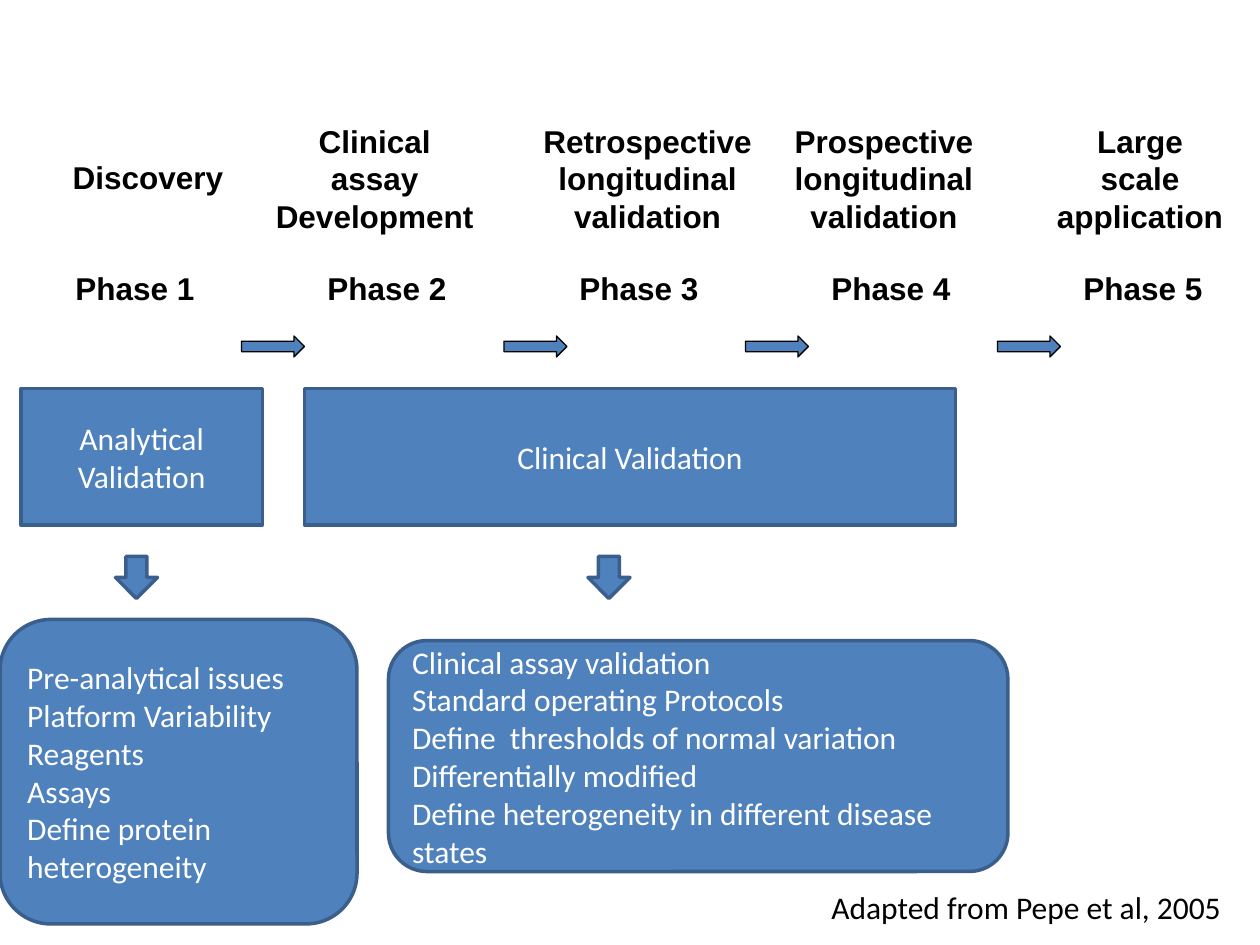
from pptx import Presentation
from pptx.dml.color import RGBColor
from pptx.enum.shapes import MSO_SHAPE
from pptx.enum.text import MSO_ANCHOR, PP_ALIGN
from pptx.oxml.ns import qn
from pptx.util import Inches, Pt
from lxml import etree

RECT, ROUND = MSO_SHAPE.RECTANGLE, MSO_SHAPE.ROUNDED_RECTANGLE
RIGHT, DOWN = MSO_SHAPE.RIGHT_ARROW, MSO_SHAPE.DOWN_ARROW
LEFT, MID = PP_ALIGN.LEFT, PP_ALIGN.CENTER

deck = Presentation()
deck.slide_width, deck.slide_height = Inches(10), Inches(7.5)
slide = deck.slides.add_slide(deck.slide_layouts[6])
unit = deck.slide_width / 120


def color(code):
    return RGBColor.from_string(code)


def put(kind, spot, text="", align=LEFT, font="Calibri", ink="FFFFFF", edge="3A5F8C", thick=2):
    place = [round(unit * n) for n in spot]
    if kind is None:
        shape = slide.shapes.add_textbox(*place)
    else:
        shape = slide.shapes.add_shape(kind, *place)
        shape.shadow.inherit = False
        shape.fill.solid()
        shape.fill.fore_color.rgb = color("4F81BD")
        shape.line.color.rgb = color(edge)
        shape.line.width = Pt(thick)
    if text:
        frame = shape.text_frame
        frame.text = text
        frame.word_wrap = True
        frame.vertical_anchor = MSO_ANCHOR.MIDDLE if kind else MSO_ANCHOR.TOP
        for para in frame.paragraphs:
            para.alignment = align
            for run in para.runs:
                run.font.name = font
                run.font.size = Pt(18)
                run.font.bold = font == "Arial"
                run.font.color.rgb = color(ink)
    return shape


heads = [
    ["Clinical", "Retrospective", "Prospective", "Large"],
    ["assay", "longitudinal", "longitudinal", "scale"],
    ["Development", "validation", "validation", "application"],
]
head = put(None, (25, 11, 95, 12), "\n".join("\t" + "\t".join(row) for row in heads),
           font="Arial", ink="000000")
put(None, (5.75, 14.5, 17, 4.8), "Discovery", font="Arial", ink="000000")
phase = put(None, (6, 25, 110, 4.8), "\t".join(f"Phase {n}" for n in range(1, 6)),
            font="Arial", ink="000000")

for box, side, stops in [(head, "ctr", (9.5, 35.5, 58, 82.4)), (phase, "l", (24, 48, 72, 96))]:
    for para in box.text_frame.paragraphs:
        tabs = etree.SubElement(para._p.get_or_add_pPr(), qn("a:tabLst"))
        for stop in stops:
            etree.SubElement(tabs, qn("a:tab"), pos=str(round(unit * stop)), algn=side)

for col in (48, 71, 95, 23):
    put(RIGHT, (col, 32, 6, 2), edge="000000", thick=0.75)

put(None, (78, 84, 40, 4.8), "Adapted from Pepe et al, 2005", ink="000000")

put(RECT, (2, 37, 23, 13), "Analytical Validation", MID)
put(RECT, (29, 37, 62, 13), "Clinical Validation", MID)

put(ROUND, (0, 59, 34, 29), "\n".join([
    "Pre-analytical issues",
    "Platform Variability",
    "Reagents",
    "Assays",
    "Define protein heterogeneity",
]))
put(ROUND, (37, 61, 59, 22), "\n".join([
    "Clinical assay validation",
    "Standard operating Protocols",
    "Define  thresholds of normal variation",
    "Differentially modified",
    "Define heterogeneity in different disease states",
]))

for col in (11, 56):
    put(DOWN, (col, 53, 4, 4))

deck.save("out.pptx")
